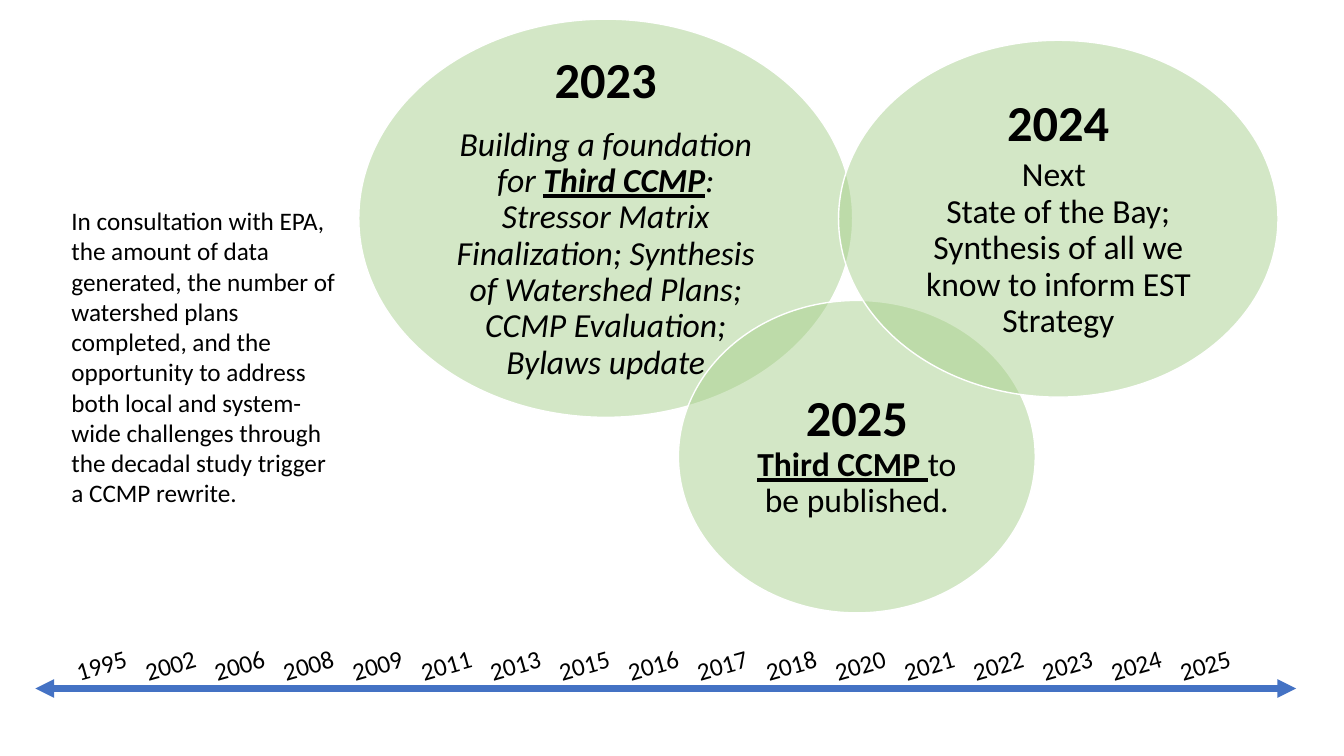
from lxml import etree
from pptx import Presentation
from pptx.dml.color import RGBColor
from pptx.enum.shapes import MSO_CONNECTOR, MSO_SHAPE
from pptx.enum.text import MSO_ANCHOR, PP_ALIGN
from pptx.oxml.ns import qn
from pptx.util import Pt

ELLIPSE = MSO_SHAPE.OVAL
STRAIGHT = MSO_CONNECTOR.STRAIGHT
TOP, MIDDLE = MSO_ANCHOR.TOP, MSO_ANCHOR.MIDDLE
LEFT, CENTER = PP_ALIGN.LEFT, PP_ALIGN.CENTER

FONT = "Calibri"
BLACK, WHITE, GREEN, BLUE = "000000", "FFFFFF", "A9D18E", "4472C4"
INSCRIBED = 0.1464  # margin of the rectangle inside an ellipse, per side
BREAK = None

YEARS = [1995, 2002, 2006, 2008, 2009, 2011, 2013, 2015, 2016,
         2017, 2018, 2020, 2021, 2022, 2023, 2024, 2025]
CONSULTATION = (
    "In consultation with EPA, the amount of data generated, the number of "
    "watershed plans completed, and the opportunity to address both local and "
    "system-wide challenges through the decadal study trigger a CCMP rewrite.")

# Run formats
HEAD = dict(size=36, bold=True)
BODY = dict(size=24)
ITALIC = dict(size=24, italic=True)
KEY = dict(size=24, bold=True, underline=True)

# Each circle: its box, then paragraphs made of (text, format) runs
CIRCLES = [
    ((256.3, 13.7, 352.8, 284.4), [
        [("2023", HEAD)],
        [("Building a foundation for ", ITALIC),
         ("Third CCMP", dict(KEY, italic=True)),
         (": Stressor Matrix Finalization; Synthesis of Watershed Plans; "
          "CCMP Evaluation; Bylaws update", ITALIC)]]),
    ((484.6, 214.6, 254.9, 223.2), [
        [("2025", HEAD), BREAK,
         ("Third CCMP ", KEY), ("to be published.", BODY)]]),
    ((599, 28.8, 313.9, 254.9), [
        [("2024", HEAD), BREAK,
         ("Next", BODY), (" ", dict(size=28)), BREAK,
         ("State of the Bay;", BODY), BREAK,
         ("Synthesis of all we know to inform EST Strategy", BODY)]]),
]


def rgb(color):
    return RGBColor.from_string(color)


def add_run(p, text, size=18, bold=False, italic=False, underline=False,
            color=BLACK):
    r = p.add_run()
    r.text = text
    f = r.font
    f.name, f.size, f.color.rgb = FONT, Pt(size), rgb(color)
    f.bold, f.italic, f.underline = bold, italic, underline


def add_text(shapes, box, paragraphs, align=LEFT, anchor=TOP, inset=(7.2, 3.6),
             line=None, after=None, rotation=0):
    sp = shapes.add_textbox(*map(Pt, box))
    sp.rotation = rotation
    tf = sp.text_frame
    tf.word_wrap, tf.vertical_anchor = True, anchor
    tf.margin_left = tf.margin_right = Pt(inset[0])
    tf.margin_top = tf.margin_bottom = Pt(inset[1])
    for i, runs in enumerate(paragraphs):
        p = tf.add_paragraph() if i else tf.paragraphs[0]
        p.alignment, p.line_spacing = align, line
        if after is not None:
            p.space_after = Pt(after)
        for run in runs:
            if run is BREAK:
                p.add_line_break()
            else:
                add_run(p, run[0], **run[1])


def add_circle(shapes, box, paragraphs):
    # Half-transparent ellipse
    sp = shapes.add_shape(ELLIPSE, *map(Pt, box))
    sp.shadow.inherit = False
    sp.fill.solid()
    sp.fill.fore_color.rgb = rgb(GREEN)
    clr = sp.fill._xPr.find(".//" + qn("a:srgbClr"))
    etree.SubElement(clr, qn("a:alpha"), val="50000")
    sp.line.color.rgb, sp.line.width = rgb(WHITE), Pt(1)

    # Text in the inscribed rectangle
    x, y, w, h = box
    inner = (x + w * INSCRIBED, y + h * INSCRIBED,
             w * (1 - 2 * INSCRIBED), h * (1 - 2 * INSCRIBED))
    add_text(shapes, inner, paragraphs, align=CENTER, anchor=MIDDLE,
             inset=(10.8, 10.8), line=0.9, after=12.6)


def add_venn(s, circles):
    group = s.shapes.add_group_shape()
    for box, paragraphs in circles:
        add_circle(group.shapes, box, paragraphs)


def add_timeline(s, box, years):
    x, y, w, h = box
    # Double-headed axis
    axis = s.shapes.add_connector(STRAIGHT, Pt(x), Pt(y + h),
                                  Pt(x + w), Pt(y + h))
    axis.line.color.rgb, axis.line.width = rgb(BLUE), Pt(4.5)
    for end in ("a:headEnd", "a:tailEnd"):
        etree.SubElement(axis.line._get_or_add_ln(), qn(end), type="triangle")
    etree.SubElement(axis._element.spPr, qn("a:effectLst"))

    # Tilted year labels at an equal pitch
    label_w, label_h, first, last = 58.3, 28.8, 21.6, 43.2
    pitch = (w - first - last + 7.2 - label_w + 3.6) / (len(years) - 1)
    for i, year in enumerate(years):
        add_text(s.shapes, (x + first + i * pitch, y, label_w, label_h),
                 [[(str(year), {})]], rotation=344.2)


def main():
    prs = Presentation()
    prs.slide_width, prs.slide_height = Pt(960), Pt(540)
    s = prs.slides.add_slide(prs.slide_layouts[6])
    add_venn(s, CIRCLES)
    add_timeline(s, (25.2, 459.4, 900.7, 32.4), YEARS)
    add_text(s.shapes, (43.9, 143.3, 203, 247), [[(CONSULTATION, {})]])
    prs.save("out.pptx")


if __name__ == "__main__":
    main()
